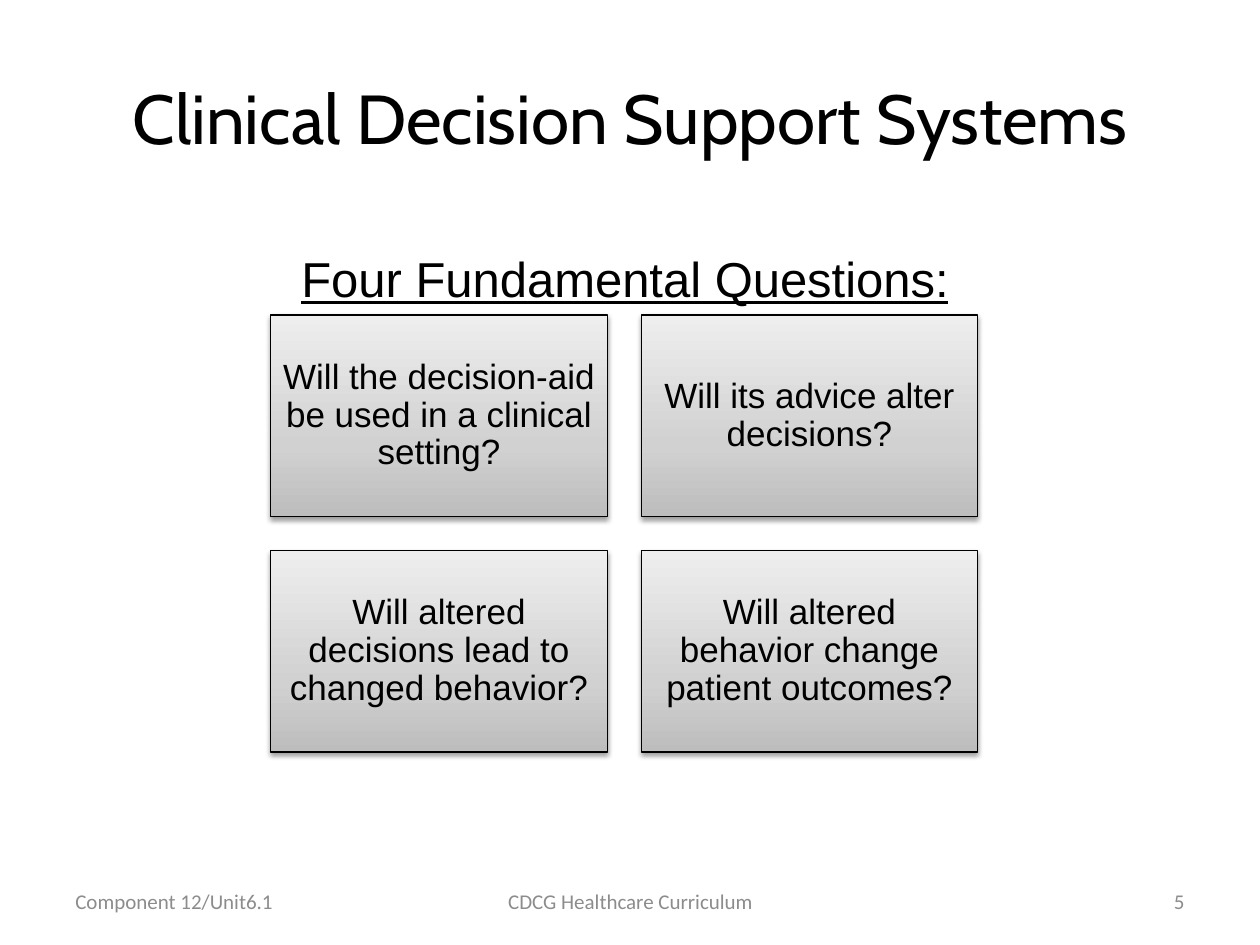
from lxml import etree
from pptx import Presentation
from pptx.dml.color import RGBColor
from pptx.enum.shapes import MSO_SHAPE as SHAPE
from pptx.enum.text import MSO_ANCHOR as ANCHOR, MSO_AUTO_SIZE as AUTOSIZE, PP_ALIGN as ALIGN
from pptx.oxml import parse_xml
from pptx.oxml.ns import nsdecls, qn
from pptx.util import Inches, Pt

COLS, ROWS = 100, 75
BLACK, GREY = "000000", "8C8C8C"


def color(value):
    return RGBColor.from_string(value)


def write(sp, text, font="Arial", size=20, fill=BLACK, align=ALIGN.CENTER,
          anchor=ANCHOR.MIDDLE, underline=None, spacing=None, inset=None):
    tf = sp.text_frame
    tf.word_wrap = True
    tf.auto_size = AUTOSIZE.NONE
    tf.vertical_anchor = anchor
    if inset is not None:
        tf.margin_left = tf.margin_right = Inches(inset)
        tf.margin_top = tf.margin_bottom = Inches(inset)
    p = tf.paragraphs[0]
    p.alignment = align
    p.line_spacing = spacing
    r = p.add_run()
    r.text = text
    r.font.name, r.font.size = font, Pt(size)
    r.font.color.rgb = color(fill)
    r.font.underline = underline


class Deck:
    """Holds the style and the current slide; lengths are grid columns and rows."""

    stops = [(0, "BDBDBD"), (35, "D1D1D1"), (100, "EEEEEE")]

    def __init__(self):
        self.prs = Presentation()
        self.prs.slide_width, self.prs.slide_height = Inches(10), Inches(7.5)
        self.s = self.prs.slides.add_slide(self.prs.slide_layouts[5])

    def area(self, col, row, cols, rows):
        dx, dy = self.prs.slide_width / COLS, self.prs.slide_height / ROWS
        return int(col * dx), int(row * dy), int(cols * dx), int(rows * dy)

    def title(self, text, *cells):
        sp = self.s.shapes.title
        sp.left, sp.top, sp.width, sp.height = self.area(*cells)
        write(sp, text, font="Cabin", size=39.6)

    def label(self, text, *cells, **fmt):
        write(self.s.shapes.add_textbox(*self.area(*cells)), text, **fmt)

    def card(self, text, *cells):
        sp = self.s.shapes.add_shape(SHAPE.RECTANGLE, *self.area(*cells))
        sp.line.color.rgb = color(BLACK)
        sp.line.width = Pt(0.75)
        self.shade(sp)
        self.shadow(sp)
        write(sp, text, spacing=0.9, inset=0.08)

    def shade(self, sp):
        sp.fill.gradient()
        sp.fill.gradient_angle = 90
        stop_list = sp._element.spPr.find(".//" + qn("a:gsLst"))
        for old in list(stop_list):
            stop_list.remove(old)
        for pos, value in self.stops:
            gs = etree.SubElement(stop_list, qn("a:gs"), pos=str(pos * 1000))
            etree.SubElement(gs, qn("a:srgbClr"), val=value)

    def shadow(self, sp):
        sp.shadow.inherit = False
        sp._element.spPr.find(qn("a:effectLst")).append(parse_xml(
            f'<a:outerShdw {nsdecls("a")} blurRad="{Pt(3.1)}" dist="{Pt(1.6)}" '
            f'dir="5400000" rotWithShape="0"><a:srgbClr val="{BLACK}">'
            '<a:alpha val="38000"/></a:srgbClr></a:outerShdw>'))


def main():
    deck = Deck()
    deck.title("Clinical Decision Support Systems", 5, 3, 90, 12.5)

    # Two by two grid of questions
    questions = [
        "Will the decision-aid be used in a clinical setting?",
        "Will its advice alter decisions?",
        "Will altered decisions lead to changed behavior?",
        "Will altered behavior change patient outcomes?",
    ]
    width, height, gap = 26.7, 16, 2.7
    for i, question in enumerate(questions):
        row, col = divmod(i, 2)
        deck.card(question, 21.5 + col * (width + gap), 25 + row * (height + gap),
                  width, height)

    # Heading above the grid
    deck.label("Four Fundamental Questions:", 21.7, 19.2, 55.8, 5.7,
               size=28, underline=True, anchor=ANCHOR.TOP)

    # Footer
    for text, col, cols, align in [
        ("Component 12/Unit6.1", 5, 23.3, ALIGN.LEFT),
        ("CDCG Healthcare Curriculum", 34.2, 31.7, ALIGN.CENTER),
        ("5", 71.7, 23.3, ALIGN.RIGHT),
    ]:
        deck.label(text, col, 69.5, cols, 4,
                   font="Calibri", size=12, fill=GREY, align=align)

    deck.prs.save("out.pptx")


if __name__ == "__main__":
    main()
